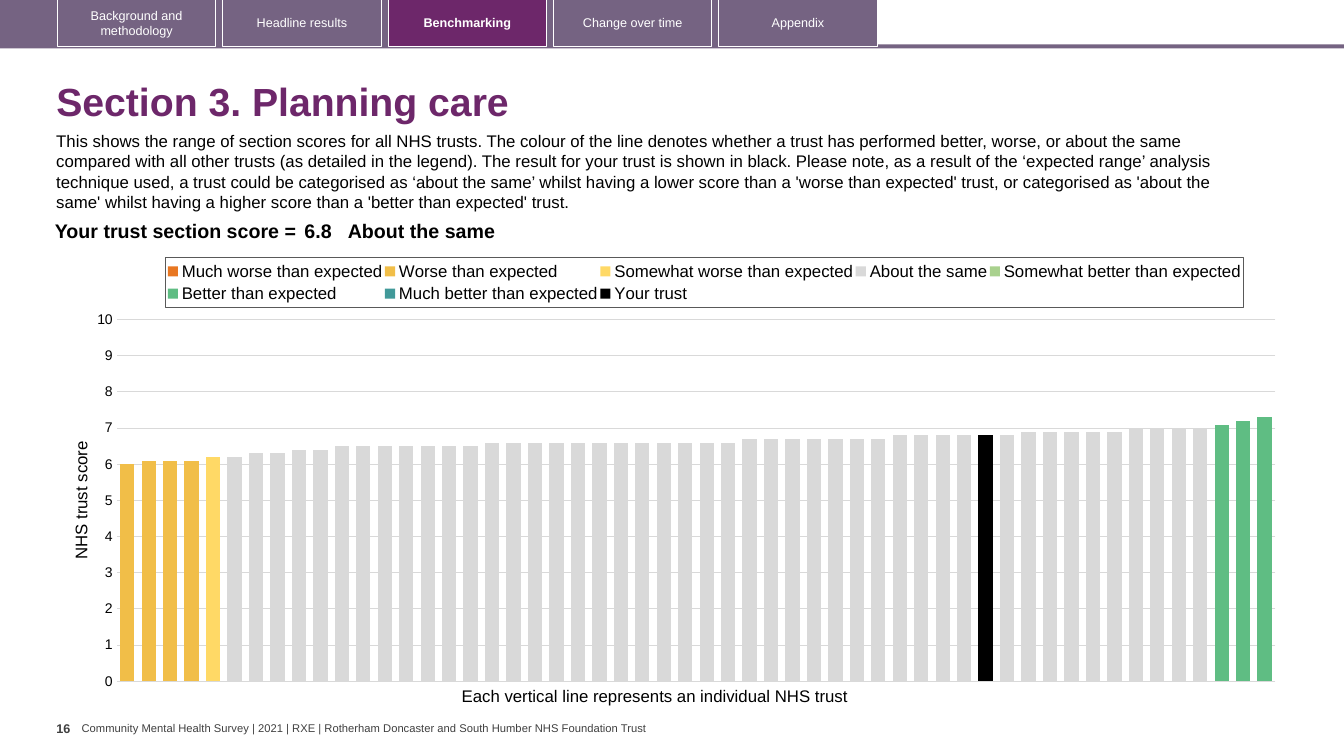
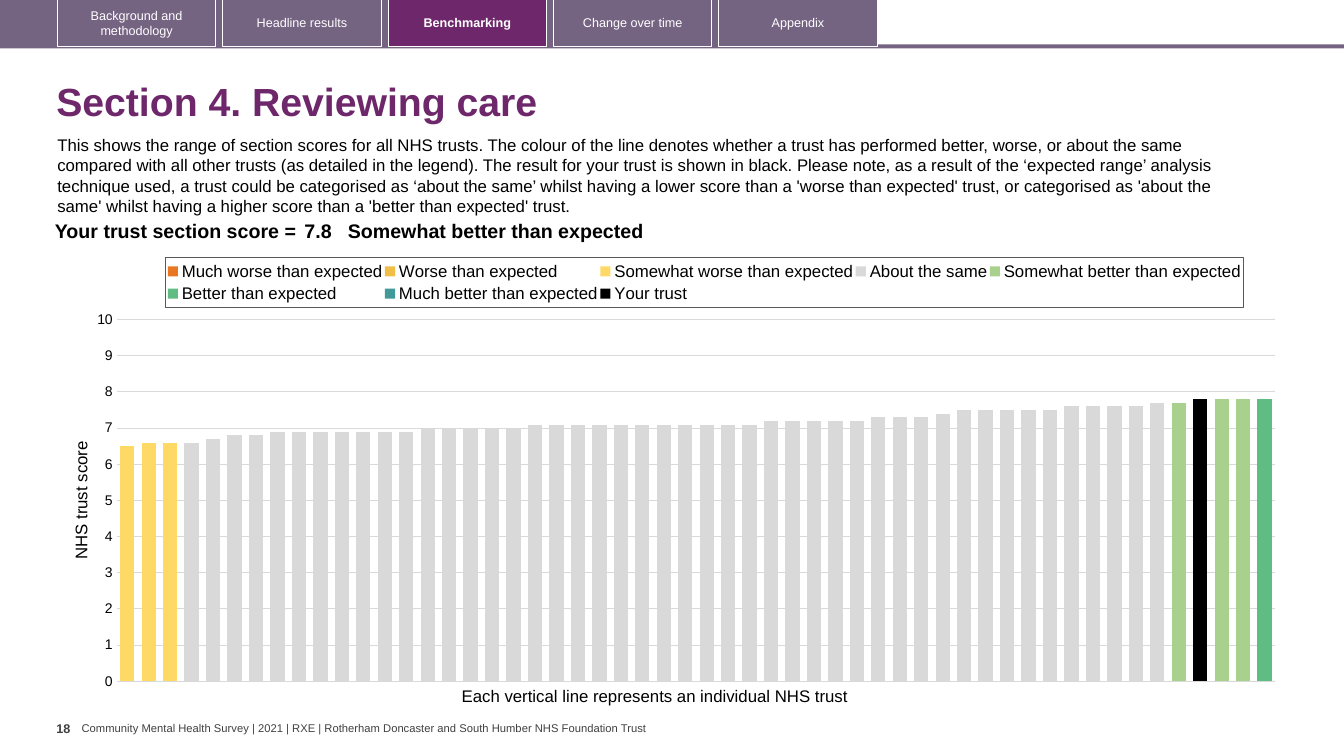
from copy import deepcopy
from dataclasses import dataclass
from lxml import etree
from pptx import Presentation
from pptx import util as u
from pptx.chart import data
from pptx.dml import color
from pptx.enum import chart as ce
from pptx.enum import shapes, text
from pptx.oxml import ns


@dataclass(frozen=True)
class Theme:
    face: str = "Arial"
    plum: str = "6D276A"
    mauve: str = "756382"
    white: str = "FFFFFF"
    black: str = "000000"
    slate: str = "404040"
    frame: str = "595959"
    grid: str = "D9D9D9"
    title: int = 28
    score: int = 14
    body: int = 12
    tick: int = 10
    tab: int = 9
    foot: int = 8
    rule: float = 0.75


T = Theme()
TABS = ["Background and methodology", "Headline results", "Benchmarking",
        "Change over time", "Appendix"]
HERE = "Benchmarking"
FOOT = ("Community Mental Health Survey | 2021 | RXE | "
        "Rotherham Doncaster and South Humber NHS Foundation Trust")
INTRO = (
    "This shows the range of section scores for all NHS trusts. The colour of the line "
    "denotes whether a trust has performed better, worse, or about the same compared with "
    "all other trusts (as detailed in the legend). The result for your trust is shown in "
    "black. Please note, as a result of the ‘expected range’ analysis technique used, a "
    "trust could be categorised as ‘about the same’ whilst having a lower score than a "
    "'worse than expected' trust, or categorised as 'about the same' whilst having a higher "
    "score than a 'better than expected' trust.")
AXIS = "Each vertical line represents an individual NHS trust"
OWN = "Your trust"
BANDS = {
    "Much worse than expected": "E87722",
    "Worse than expected": "F1BE48",
    "Somewhat worse than expected": "FFD966",
    "About the same": "D9D9D9",
    "Somewhat better than expected": "A9D18E",
    "Better than expected": "5FBD83",
    "Much better than expected": "419999",
    OWN: T.black,
}
PAGES = [
    {"title": "Section 3. Planning care", "page": "16", "intro": (0.46, 1.25),
     "score": 6.8, "band": "About the same", "rank": 41,
     "tally": {
         "Worse than expected": {6: 1, 6.1: 3},
         "Somewhat worse than expected": {6.2: 1},
         "About the same": {6.2: 1, 6.3: 2, 6.4: 2, 6.5: 7, 6.6: 12, 6.7: 7,
                            6.8: 6, 6.9: 5, 7: 4},
         "Better than expected": {7.1: 1, 7.2: 1, 7.3: 1}}},
    {"title": "Section 4. Reviewing care", "page": "18", "intro": (0.47, 1.29),
     "score": 7.8, "band": "Somewhat better than expected", "rank": 51,
     "tally": {
         "Somewhat worse than expected": {6.5: 1, 6.6: 2},
         "About the same": {6.6: 1, 6.7: 1, 6.8: 2, 6.9: 7, 7: 5, 7.1: 11, 7.2: 5,
                            7.3: 3, 7.4: 1, 7.5: 5, 7.6: 4, 7.7: 1},
         "Somewhat better than expected": {7.7: 1, 7.8: 3},
         "Better than expected": {7.8: 1}}},
]


def rgb(code):
    return color.RGBColor.from_string(code)


def place(*box):
    return [u.Inches(n) for n in box]


def apply(item, **values):
    for key, value in values.items():
        setattr(item, key, value)


def style(font, size, ink=T.black, bold=False):
    apply(font, name=T.face, size=u.Pt(size), bold=bold)
    font.color.rgb = rgb(ink)


def pad(item, left, top, right, bottom):
    apply(item, margin_left=u.Inches(left), margin_top=u.Inches(top),
          margin_right=u.Inches(right), margin_bottom=u.Inches(bottom))


def write(frame, words, size, ink=T.black, bold=False, align=text.PP_ALIGN.LEFT):
    para = frame.paragraphs[0]
    para.alignment = align
    run = para.add_run()
    run.text = words
    style(run.font, size, ink, bold)
    return para


def label(slide, box, words, size, ink=T.black, bold=False, wrap=True,
          inset=(0.1, 0.05, 0.1, 0.05), anchor=text.MSO_ANCHOR.TOP):
    frame = slide.shapes.add_textbox(*place(*box)).text_frame
    apply(frame, word_wrap=wrap, vertical_anchor=anchor)
    pad(frame, *inset)
    return write(frame, words, size, ink, bold)


def block(slide, box, fill=None, line=None):
    shape = slide.shapes.add_shape(shapes.MSO_SHAPE.RECTANGLE, *place(*box))
    shape.shadow.inherit = False
    if fill:
        shape.fill.solid()
        shape.fill.fore_color.rgb = rgb(fill)
    else:
        shape.fill.background()
    if line:
        shape.line.color.rgb = rgb(line)
        shape.line.width = u.Pt(T.rule)
    else:
        shape.line.fill.background()
    return shape


def frame(slide, page):
    middle = text.MSO_ANCHOR.MIDDLE
    label(slide, (0.81, 7.16, 5.68, 0.13), FOOT, T.foot, T.slate, wrap=False,
          inset=(0, 0, 0, 0), anchor=middle)
    block(slide, (-0.03, 0.44, 13.36, 0.04), T.mauve)
    block(slide, (-0.03, 0, 8.73, 0.47), T.mauve)
    for i, name in enumerate(TABS):
        live = name == HERE
        tab = block(slide, (0.57 + 1.64 * i, -0.01, 1.57, 0.47),
                    T.plum if live else None, T.white)
        apply(tab.text_frame, word_wrap=True, vertical_anchor=middle)
        write(tab.text_frame, name, T.tab, T.white, live, text.PP_ALIGN.CENTER)
    head = label(slide, (0.46, 0.67, 12.49, 0.72), page["title"], T.title, T.plum,
                 True, anchor=middle)
    head.line_spacing = 0.9
    label(slide, (0.56, 7.1, 0.25, 0.4), page["page"], T.tab, T.slate, True,
          wrap=False, inset=(0, 0.05, 0, 0.05))


def spread(page):
    total = sum(sum(runs.values()) for runs in page["tally"].values())
    rows = {name: [None] * total for name in BANDS}
    spot = 0
    for name, runs in page["tally"].items():
        for score, count in runs.items():
            rows[name][spot:spot + count] = [score] * count
            spot += count
    rows[OWN][page["rank"] - 1] = page["score"]
    return rows


def layout(parent, after, inner=False, **values):
    old = parent.find(ns.qn("c:layout"))
    if old is not None:
        parent.remove(old)
    node = etree.Element(ns.qn("c:layout"))
    hold = etree.SubElement(node, ns.qn("c:manualLayout"))
    pairs = {"layoutTarget": "inner"} if inner else {}
    pairs.update(xMode="edge", yMode="edge", **values)
    for key, value in pairs.items():
        etree.SubElement(hold, ns.qn("c:" + key)).set("val", str(value))
    if after is None:
        parent.insert(0, node)
    else:
        after.addnext(node)


def split(chart):
    plot = chart._chartSpace.chart.plotArea
    bars = plot.find(ns.qn("c:barChart"))
    axes = [plot.find(ns.qn(tag)) for tag in ("c:catAx", "c:valAx")]
    twin = deepcopy(bars)
    bars.remove(bars.findall(ns.qn("c:ser"))[-1])
    for ser in twin.findall(ns.qn("c:ser"))[:-1]:
        twin.remove(ser)
    bars.addnext(twin)
    ids = {axis.find(ns.qn("c:axId")).get("val"): str(900 + i)
           for i, axis in enumerate(axes)}
    pair = [deepcopy(axis) for axis in axes]
    for axis in pair:
        for tag in ("c:title", "c:majorGridlines"):
            for node in axis.findall(ns.qn(tag)):
                axis.remove(node)
        axes[-1].addnext(axis)
    for part in [twin] + pair:
        for tag in ("c:axId", "c:crossAx"):
            for node in part.findall(ns.qn(tag)):
                node.set("val", ids[node.get("val")])
    right = pair[1]
    for tag, value in {"c:axPos": "r", "c:majorTickMark": "out",
                       "c:tickLblPos": "none", "c:crosses": "max"}.items():
        right.find(ns.qn(tag)).set("val", value)


def graph(slide, page):
    rows = spread(page)
    book = data.CategoryChartData()
    book.categories = [str(i + 1) for i in range(len(rows[OWN]))]
    for name, vals in rows.items():
        book.add_series(name, vals)
    chart = slide.shapes.add_chart(ce.XL_CHART_TYPE.COLUMN_CLUSTERED,
                                   *place(0.67, 2.47, 12.15, 4.44), book).chart
    style(chart.font, T.tick)
    apply(chart, has_title=False, has_legend=True)
    apply(chart.plots[0], gap_width=50, overlap=100, vary_by_categories=False)
    for ser in chart.plots[0].series:
        ser.format.fill.solid()
        ser.format.fill.fore_color.rgb = rgb(BANDS[ser.name])
    chart.category_axis.visible = False
    axis = chart.value_axis
    apply(axis, minimum_scale=0, maximum_scale=10, major_unit=1,
          has_major_gridlines=True, major_tick_mark=ce.XL_TICK_MARK.NONE,
          minor_tick_mark=ce.XL_TICK_MARK.NONE)
    style(axis.tick_labels.font, T.tick)
    axis.format.line.fill.background()
    rule = axis.major_gridlines.format.line
    rule.color.rgb = rgb(T.grid)
    rule.width = u.Pt(T.rule)
    write(axis.axis_title.text_frame, "NHS trust score", T.body)
    key = chart.legend
    apply(key, position=ce.XL_LEGEND_POSITION.TOP, include_in_layout=False)
    style(key.font, T.body)
    node = key._element
    layout(node, node.find(ns.qn("c:legendPos")), x=0.08, y=0.02, w=0.88, h=0.11)
    edge = etree.Element(ns.qn("c:spPr"))
    line = etree.SubElement(edge, ns.qn("a:ln"), w=str(u.Pt(T.rule)))
    fill = etree.SubElement(line, ns.qn("a:solidFill"))
    etree.SubElement(fill, ns.qn("a:srgbClr"), val=T.frame)
    node.find(ns.qn("c:txPr")).addprevious(edge)
    layout(chart._chartSpace.chart.plotArea, None, True,
           x=0.04, y=0.158, w=0.946, h=0.808)
    split(chart)


def result(slide, page):
    cells = {"Your trust section score =": 2.63, str(page["score"]): 0.47,
             page["band"]: 8.6}
    table = slide.shapes.add_table(1, len(cells), *place(0.35, 2.15, 11.7, 0.31)).table
    apply(table, first_row=False, horz_banding=False)
    for i, (words, width) in enumerate(cells.items()):
        table.columns[i].width = u.Inches(width)
        cell = table.cell(0, i)
        cell.fill.background()
        side = 0 if i == 2 else 0.04
        pad(cell, side, 0.04, side, 0.04)
        write(cell.text_frame, words, T.score, bold=True,
              align=text.PP_ALIGN.LEFT if i else text.PP_ALIGN.RIGHT)


def main():
    deck = Presentation()
    apply(deck, slide_width=u.Inches(13.33), slide_height=u.Inches(7.5))
    for page in PAGES:
        slide = deck.slides.add_slide(deck.slide_layouts[6])
        frame(slide, page)
        label(slide, (*page["intro"], 12.13, 0.91), INTRO, T.body)
        label(slide, (4.48, 6.75, 4.11, 0.3), AXIS, T.body, wrap=False)
        graph(slide, page)
        result(slide, page)
    deck.save("out.pptx")


if __name__ == "__main__":
    main()
